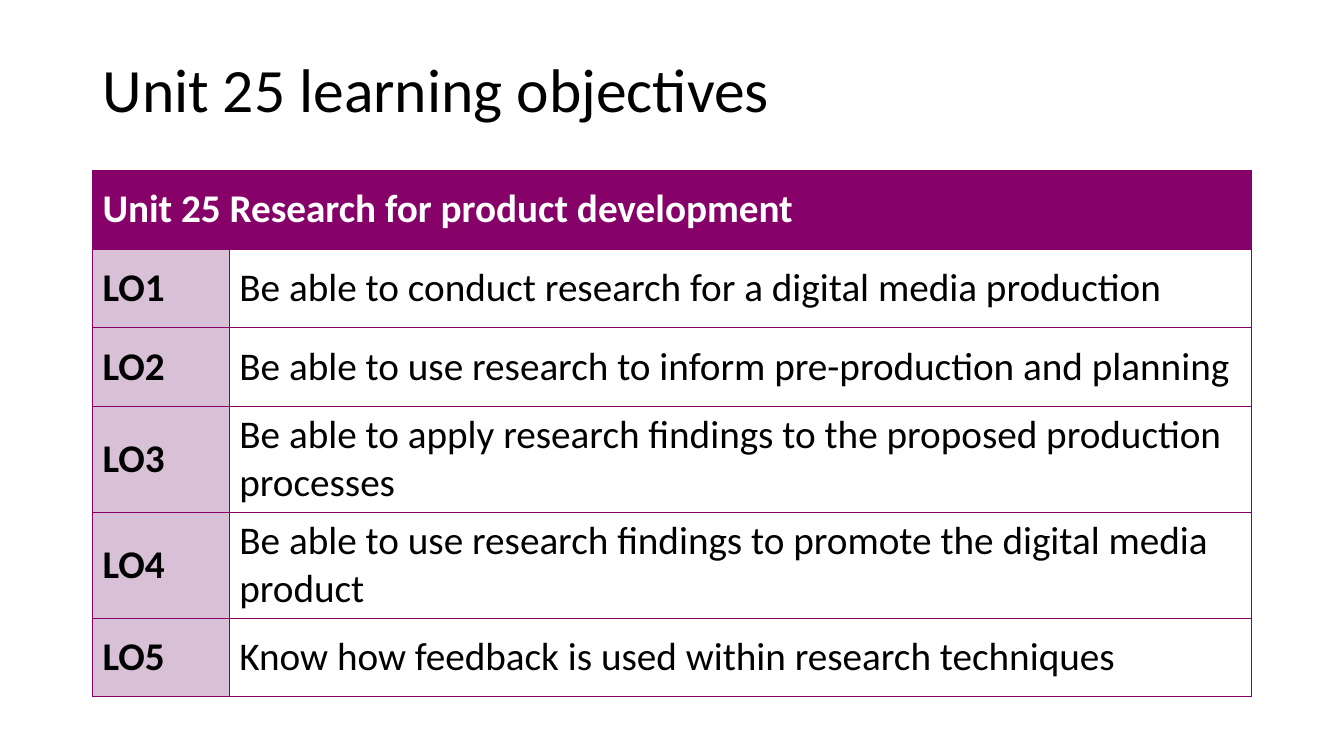
"""Build the slide of learning objectives for Unit 25."""
import pptx
import pptx.util
import pptx.dml.color
import pptx.enum.text
import pptx.oxml
import pptx.oxml.ns

Cm, Pt = pptx.util.Cm, pptx.util.Pt
HUES = {"black": "000000", "white": "FFFFFF", "plum": "870268", "pale": "D8C1D6", "edge": "870068"}
GOALS = [
    "Be able to conduct research for a digital media production",
    "Be able to use research to inform pre-production and planning",
    "Be able to apply research findings to the proposed production processes",
    "Be able to use research findings to promote the digital media product",
    "Know how feedback is used within research techniques",
]
LEFT, WIDTH = Cm(2.33), Cm(29.21)
CODE, SINGLE, DOUBLE = Cm(3.45), Cm(1.98), Cm(2.67)
WRAP = 62


class Deck:
    def __init__(self, font, hues):
        self.font, self.hues = font, hues
        self.show = pptx.Presentation()
        self.show.slide_width, self.show.slide_height = Cm(33.87), Cm(19.05)
        self.slide = self.show.slides.add_slide(self.show.slide_layouts[5])

    def hue(self, name):
        return pptx.dml.color.RGBColor.from_string(self.hues[name])

    def label(self, frame, text, size, color="black", bold=False):
        frame.text = text
        para = frame.paragraphs[0]
        para.alignment = pptx.enum.text.PP_ALIGN.LEFT
        para.font.name, para.font.size, para.font.bold = self.font, Pt(size), bold
        para.font.color.rgb = self.hue(color)
        return para

    def title(self, text, left, top, width, height):
        box = self.slide.shapes.title
        box.left, box.top, box.width, box.height = left, top, width, height
        frame = box.text_frame
        frame.auto_size = pptx.enum.text.MSO_AUTO_SIZE.NONE
        frame.vertical_anchor = pptx.enum.text.MSO_ANCHOR.MIDDLE
        self.label(frame, text, 44).line_spacing = 0.9

    def table(self, left, top, cols, rows):
        frame = self.slide.shapes.add_table(len(rows), len(cols), left, top, sum(cols), sum(rows))
        grid = frame.table
        for col, width in zip(grid.columns, cols):
            col.width = width
        for row, height in zip(grid.rows, rows):
            row.height = height
        return grid

    def cell(self, cell, text, fill, color="black", bold=False):
        props = cell._tc.get_or_add_tcPr()
        for side in "LRTB":
            props.append(pptx.oxml.parse_xml(
                f'<a:ln{side} {pptx.oxml.ns.nsdecls("a")} w="{Pt(0.5)}"><a:solidFill>'
                f'<a:srgbClr val="{self.hues["edge"]}"/></a:solidFill></a:ln{side}>'))
        cell.fill.solid()
        cell.fill.fore_color.rgb = self.hue(fill)
        cell.vertical_anchor = pptx.enum.text.MSO_ANCHOR.MIDDLE
        self.label(cell.text_frame, text, 28, color, bold)


deck = Deck("Calibri", HUES)
deck.title("Unit 25 learning objectives", LEFT, Cm(1.01), WIDTH, Cm(2.65))
rows = [SINGLE] + [DOUBLE if len(goal) > WRAP else SINGLE for goal in GOALS]
grid = deck.table(LEFT, Cm(4.29), [CODE, WIDTH - CODE], rows)
grid.cell(0, 0).merge(grid.cell(0, 1))
for col, text in enumerate(["Unit 25 Research for product development", ""]):
    deck.cell(grid.cell(0, col), text, "plum", "white", True)
for row, goal in enumerate(GOALS, 1):
    deck.cell(grid.cell(row, 0), f"LO{row}", "pale", bold=True)
    deck.cell(grid.cell(row, 1), goal, "white")
deck.show.save("out.pptx")
